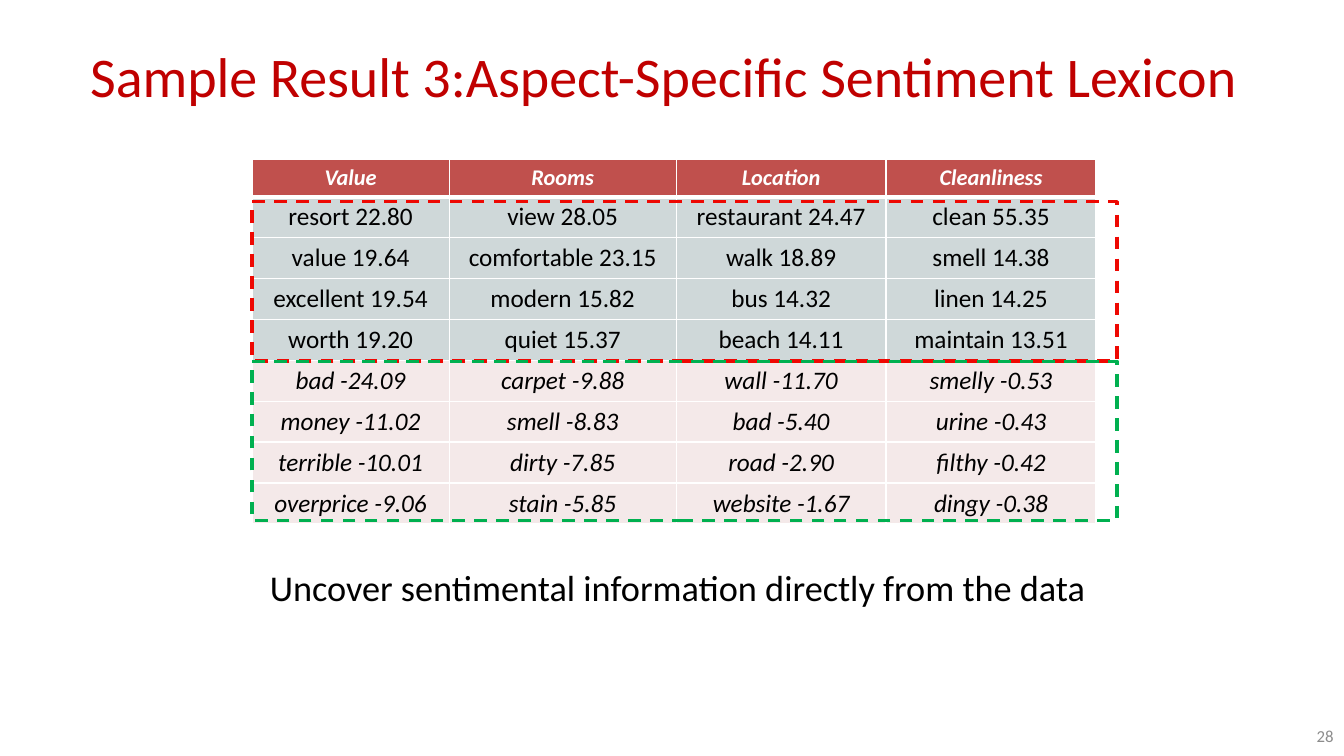
from dataclasses import dataclass

from lxml import etree
from pptx import Presentation
from pptx import util as u
from pptx.dml.color import RGBColor
from pptx.enum import dml, shapes, text
from pptx.oxml import ns


@dataclass(frozen=True)
class Theme:
    font: str = "Calibri"
    title: str = "C00000"
    ink: str = "000000"
    white: str = "FFFFFF"
    page: str = "8C8C8C"
    header: str = "C0504D"
    positive: str = "CFD8D9"
    negative: str = "F4E9E9"
    positive_frame: str = "EE0802"
    negative_frame: str = "00B050"
    title_size: float = 40
    caption_size: float = 25.9
    header_size: float = 16
    word_size: float = 18
    page_size: float = 12


THEME = Theme()
ASPECTS = ["Value", "Rooms", "Location", "Cleanliness"]
POSITIVE = [
    ["resort 22.80", "view 28.05", "restaurant 24.47", "clean 55.35"],
    ["value 19.64", "comfortable 23.15", "walk 18.89", "smell 14.38"],
    ["excellent 19.54", "modern 15.82", "bus 14.32", "linen 14.25"],
    ["worth 19.20", "quiet 15.37", "beach 14.11", "maintain 13.51"],
]
NEGATIVE = [
    ["bad -24.09", "carpet -9.88", "wall -11.70", "smelly -0.53"],
    ["money -11.02", "smell -8.83", "bad -5.40", "urine -0.43"],
    ["terrible -10.01", "dirty -7.85", "road -2.90", "filthy -0.42"],
    ["overprice -9.06", "stain -5.85", "website -1.67", "dingy -0.38"],
]
COLUMN_WIDTHS = [4.97, 5.72, 5.29, 5.29]
HEADER_HEIGHT, WORD_HEIGHT = 0.94, 1.03
LEXICON_LEFT, LEXICON_TOP = 6.35, 4.02
FRAME_TOP, FRAME_WIDTH, FRAME_HEIGHT = 5.08, 21.8, 4.02


def write(frame, wording, size, color, align, **style):
    """Fill a text frame or cell frame with one styled paragraph."""
    paragraph = frame.paragraphs[0]
    paragraph.text = wording
    paragraph.alignment = align
    font = paragraph.runs[0].font
    font.color.rgb = RGBColor.from_string(color)
    for key, value in {"name": THEME.font, "size": u.Pt(size), **style}.items():
        setattr(font, key, value)


def add_label(slide, box, wording, size, color, align):
    label = slide.shapes.add_textbox(*map(u.Cm, box))
    frame = label.text_frame
    frame.word_wrap = True
    frame.vertical_anchor = text.MSO_ANCHOR.MIDDLE
    write(frame, wording, size, color, align)


def add_cell_borders(cell, bottom_points):
    properties = cell._tc.get_or_add_tcPr()
    for side, points in {"L": 1, "R": 1, "T": 1, "B": bottom_points}.items():
        line = etree.SubElement(properties, ns.qn(f"a:ln{side}"), w=str(u.Pt(points)))
        fill = etree.SubElement(line, ns.qn("a:solidFill"))
        etree.SubElement(fill, ns.qn("a:srgbClr"), val=THEME.white)


def add_lexicon(slide):
    header = dict(size=THEME.header_size, color=THEME.white, bold=True, italic=True)
    words = dict(size=THEME.word_size, color=THEME.ink, bold=False)
    rows = [(ASPECTS, THEME.header, header)]
    rows += [(row, THEME.positive, {**words, "italic": False}) for row in POSITIVE]
    rows += [(row, THEME.negative, {**words, "italic": True}) for row in NEGATIVE]
    heights = [HEADER_HEIGHT] + [WORD_HEIGHT] * (len(rows) - 1)
    box = (LEXICON_LEFT, LEXICON_TOP, sum(COLUMN_WIDTHS), sum(heights))
    lexicon = slide.shapes.add_table(len(rows), len(ASPECTS), *map(u.Cm, box)).table
    for column, width in zip(lexicon.columns, COLUMN_WIDTHS):
        column.width = u.Cm(width)
    for index, (entries, fill, style) in enumerate(rows):
        lexicon.rows[index].height = u.Cm(heights[index])
        for cell, entry in zip(lexicon.rows[index].cells, entries):
            add_cell_borders(cell, 3 if index == 0 else 1)
            cell.fill.solid()
            cell.fill.fore_color.rgb = RGBColor.from_string(fill)
            cell.vertical_anchor = text.MSO_ANCHOR.MIDDLE
            write(cell.text_frame, entry, align=text.PP_ALIGN.CENTER, **style)


def add_dashed_frame(slide, top, color):
    box = (LEXICON_LEFT, top, FRAME_WIDTH, FRAME_HEIGHT)
    frame = slide.shapes.add_shape(shapes.MSO_SHAPE.RECTANGLE, *map(u.Cm, box))
    frame.shadow.inherit = False
    frame.fill.background()
    frame.line.color.rgb = RGBColor.from_string(color)
    frame.line.width = u.Pt(2.25)
    frame.line.dash_style = dml.MSO_LINE.DASH


def main():
    deck = Presentation()
    deck.slide_width, deck.slide_height = u.Cm(33.87), u.Cm(19.05)
    slide = deck.slides.add_slide(deck.slide_layouts[6])
    align = text.PP_ALIGN
    add_label(slide, (0.42, 0.6, 32.6, 2.6),
              "Sample Result 3:Aspect-Specific Sentiment Lexicon",
              THEME.title_size, THEME.title, align.CENTER)
    add_label(slide, (6.55, 14.1, 21.6, 1.4),
              "Uncover sentimental information directly from the data",
              THEME.caption_size, THEME.ink, align.LEFT)
    add_lexicon(slide)
    for index, color in enumerate((THEME.positive_frame, THEME.negative_frame)):
        add_dashed_frame(slide, FRAME_TOP + index * FRAME_HEIGHT, color)
    add_label(slide, (25.96, 18.03, 7.9, 1.02), "28",
              THEME.page_size, THEME.page, align.RIGHT)
    deck.save("out.pptx")


if __name__ == "__main__":
    main()
